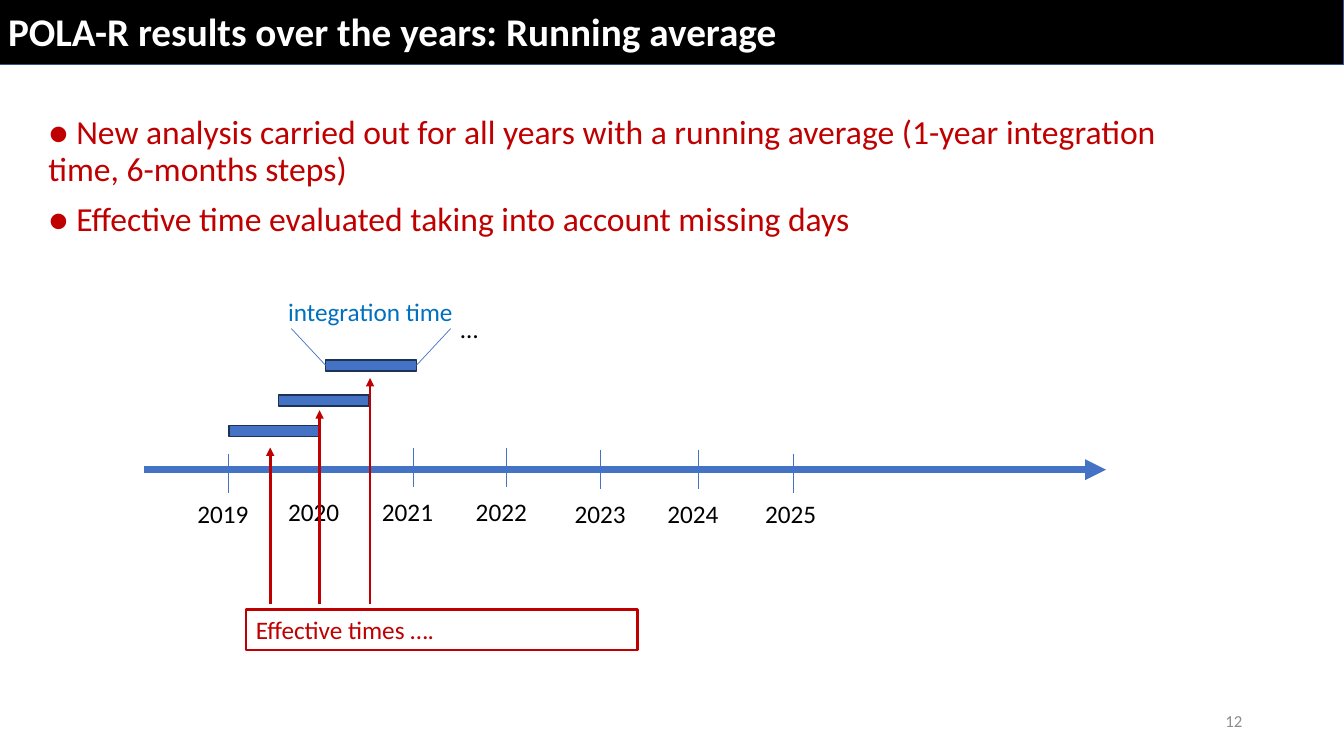
from dataclasses import dataclass

from lxml.etree import SubElement
from pptx import Presentation
from pptx.dml.color import RGBColor
from pptx.enum.shapes import MSO_CONNECTOR as Link, MSO_SHAPE as Kind
from pptx.enum.text import MSO_ANCHOR as Anchor, MSO_AUTO_SIZE as Fit, PP_ALIGN as Align
from pptx.oxml.ns import qn
from pptx.shapes.autoshape import Shape
from pptx.shapes.connector import Connector
from pptx.slide import Slide
from pptx.util import Inches, Pt

BLACK, WHITE, GREY = "000000", "FFFFFF", "8C8C8C"
BLUE, NAVY, SKY, RED = "4472C4", "1E3256", "0070C0", "C00000"
LEFT, RIGHT = 1, 3


@dataclass
class Year:
    name: str
    tick: float
    top: float
    left: float
    base: float


@dataclass
class Span:
    """One integration time and the tip of its effective time arrow."""
    left: float
    top: float
    mid: float
    tip: float


YEARS = [
    Year("2019", 2.27, 4.5, 1.86, 4.89),
    Year("2020", 3.17, 4.44, 2.76, 4.87),
    Year("2021", 4.1, 4.44, 3.69, 4.87),
    Year("2022", 5.02, 4.44, 4.62, 4.87),
    Year("2023", 5.95, 4.46, 5.6, 4.89),
    Year("2024", 6.93, 4.46, 6.52, 4.89),
    Year("2025", 7.87, 4.5, 7.49, 4.89),
]
SPANS = [
    Span(2.27, 4.22, 2.68, 4.44),
    Span(2.76, 3.92, 3.17, 4.07),
    Span(3.23, 3.57, 3.67, 3.75),
]
POINTS = [
    "● New analysis carried out for all years with a running average "
    "(1-year integration time, 6-months steps)",
    "● Effective time evaluated taking into account missing days",
]


def color(code: str) -> RGBColor:
    return RGBColor.from_string(code)


def place(shape: Shape, left: float, top: float, width: float, height: float) -> None:
    shape.left, shape.top = Inches(left), Inches(top)
    shape.width, shape.height = Inches(width), Inches(height)


def paint(shape: Shape, line: str, weight: float, fill: str = "") -> None:
    if fill:
        shape.fill.solid()
        shape.fill.fore_color.rgb = color(fill)
    shape.line.color.rgb = color(line)
    shape.line.width = Pt(weight)


def write(shape: Shape, *lines: str, size: float = 18, ink: str = BLACK,
          bold: bool = False, align: Align = Align.LEFT, anchor: Anchor = Anchor.TOP,
          before: float = 0, space: float = 1) -> None:
    frame = shape.text_frame
    frame.word_wrap, frame.auto_size = True, Fit.NONE
    frame.vertical_anchor = anchor
    frame.text = "\n".join(lines)
    for para in frame.paragraphs:
        para.alignment, para.line_spacing = align, space
        para.space_before = Pt(before)
        font = para.runs[0].font
        font.name, font.size, font.bold = "Calibri", Pt(size), bold
        font.color.rgb = color(ink)


def label(slide: Slide, text: str, left: float, top: float, width: float = 0.82,
          **form) -> Shape:
    box = slide.shapes.add_textbox(Inches(left), Inches(top), Inches(width), Inches(0.4))
    write(box, text, **form)
    return box


def rule(slide: Slide, x1: float, y1: float, x2: float, y2: float,
         ink: str = BLUE, weight: float = 0.5, arrow: bool = False) -> Connector:
    line = slide.shapes.add_connector(
        Link.STRAIGHT, Inches(x1), Inches(y1), Inches(x2), Inches(y2))
    line.line.color.rgb = color(ink)
    line.line.width = Pt(weight)
    if arrow:
        SubElement(line.line._get_or_add_ln(), qn("a:tailEnd"), type="triangle")
    SubElement(line._element.spPr, qn("a:effectLst"))
    return line


def head(slide: Slide) -> None:
    title = slide.shapes.title
    place(title, -0.02, -0.02, 13.35, 0.66)
    paint(title, "325491", 1, BLACK)
    write(title, "POLA-R results over the years: Running average",
          size=28, ink=WHITE, bold=True, anchor=Anchor.MIDDLE)


def points(slide: Slide) -> None:
    body = slide.placeholders[1]
    place(body, 0.38, 1.1, 11.79, 2.22)
    write(body, *POINTS, size=24, ink=RED, before=10, space=0.9)
    for para in body.text_frame.paragraphs:
        props = para._p.get_or_add_pPr()
        props.set("marL", "0")
        props.set("indent", "0")
        SubElement(props, qn("a:buNone"))


def axis(slide: Slide) -> None:
    rule(slide, 1.43, 4.66, 10.97, 4.66, weight=5, arrow=True)
    for year in YEARS:
        rule(slide, year.tick, year.top, year.tick, year.top + 0.39)
        label(slide, year.name, year.left, year.base)


def spans(slide: Slide) -> None:
    for span in SPANS:
        bar = slide.shapes.add_shape(
            Kind.RECTANGLE, Inches(span.left), Inches(span.top), Inches(0.9), Inches(0.11))
        bar.shadow.inherit = False
        paint(bar, NAVY, 1, BLUE)
        rule(slide, span.mid, 5.99, span.mid, span.tip, RED, 2, arrow=True)
    label(slide, "…", 4.47, 3.06)
    label(slide, "integration time", 2.76, 2.89, 1.94, ink=SKY)
    for start, end, side in ((2.89, 3.23, LEFT), (4.47, 4.13, RIGHT)):
        rule(slide, start, 3.26, end, 3.63).end_connect(bar, side)
    times = label(slide, "Effective times ….", 2.44, 6.05, 3.88, ink=RED)
    paint(times, RED, 2)


def main() -> None:
    deck = Presentation()
    deck.slide_width, deck.slide_height = Inches(13.33), Inches(7.5)
    slide = deck.slides.add_slide(deck.slide_layouts[1])
    head(slide)
    points(slide)
    axis(slide)
    spans(slide)
    label(slide, "12", 9.42, 6.95, 3, size=12, ink=GREY,
          align=Align.RIGHT, anchor=Anchor.MIDDLE)
    deck.save("out.pptx")


if __name__ == "__main__":
    main()
